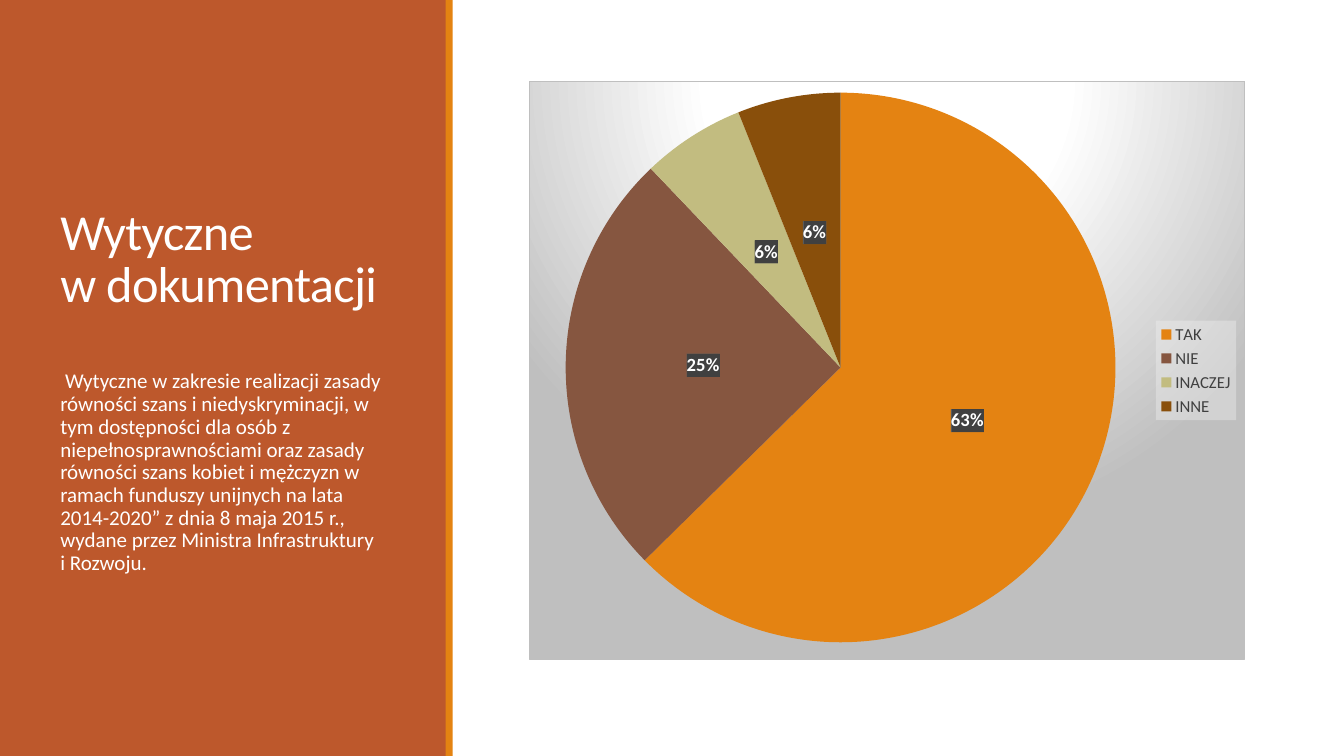
from lxml import etree
from pptx import Presentation
from pptx.chart.data import CategoryChartData
from pptx.dml.color import RGBColor
from pptx.enum.chart import XL_CHART_TYPE as ChartType
from pptx.enum.chart import XL_LABEL_POSITION as LabelPos
from pptx.enum.chart import XL_LEGEND_POSITION as LegendPos
from pptx.enum.shapes import MSO_SHAPE as Shape
from pptx.enum.text import MSO_ANCHOR as Anchor
from pptx.oxml import parse_xml
from pptx.oxml.ns import nsdecls, qn
from pptx.util import Inches, Pt

CELL = Inches(0.1)
COLS, ROWS = 133.33, 75
FONT = "Calibri"
WHITE = RGBColor(0xFF, 0xFF, 0xFF)
RUST = RGBColor(0xBD, 0x58, 0x2C)
ORANGE = RGBColor(0xE4, 0x83, 0x12)
BROWN = RGBColor(0x86, 0x56, 0x40)
SAND = RGBColor(0xC2, 0xBC, 0x80)
DARK_BROWN = RGBColor(0x89, 0x4F, 0x0B)
CHARCOAL = RGBColor(0x40, 0x40, 0x40)
GRAPHITE = RGBColor(0x59, 0x59, 0x59)
PALE = RGBColor(0xF2, 0xF2, 0xF2)
SILVER = RGBColor(0xBF, 0xBF, 0xBF)

TITLE = ["Wytyczne", "w dokumentacji"]
BODY = [
    " Wytyczne w zakresie realizacji zasady równości szans i niedyskryminacji, "
    "w tym dostępności dla osób z niepełnosprawnościami oraz zasady równości "
    "szans kobiet i mężczyzn w ramach funduszy unijnych na lata 2014-2020” "
    "z dnia 8 maja 2015 r., wydane przez Ministra Infrastruktury ",
    "i Rozwoju.",
]
ANSWERS = [("TAK", 62, ORANGE), ("NIE", 25, BROWN),
           ("INACZEJ", 6, SAND), ("INNE", 6, DARK_BROWN)]


def grid(*cells):
    return [int(c * CELL) for c in cells]


def add_band(s, col, cols, color):
    sp = s.shapes.add_shape(Shape.RECTANGLE, *grid(col, 0, cols, ROWS))
    sp.shadow.inherit = False
    sp.fill.solid()
    sp.fill.fore_color.rgb = color
    sp.line.fill.background()


def add_text(s, box, lines, size, spacing, anchor=Anchor.TOP, tracking=0):
    tf = s.shapes.add_textbox(*grid(*box)).text_frame
    tf.word_wrap = True
    tf.vertical_anchor = anchor
    p = tf.paragraphs[0]
    p.line_spacing = spacing
    for i, line in enumerate(lines):
        if i:
            p.add_line_break()
        r = p.add_run()
        r.text = line
        set_font(r.font, size, WHITE)
        if tracking:
            r.font._element.set("spc", str(int(tracking * 100)))


def set_font(font, size, color, bold=False):
    font.name = FONT
    font.size = Pt(size)
    font.color.rgb = color
    font.bold = bold


def solid(color, alpha=100):
    return (f'<a:solidFill><a:srgbClr val="{color}">'
            f'<a:alpha val="{alpha * 1000}"/></a:srgbClr></a:solidFill>')


def radial(stops):
    gs = "".join(f'<a:gs pos="{pos * 1000}"><a:srgbClr val="{color}"/></a:gs>'
                 for pos, color in stops)
    return (f'<a:gradFill><a:gsLst>{gs}</a:gsLst><a:path path="circle">'
            '<a:fillToRect l="50000" t="-80000" r="50000" b="180000"/>'
            '</a:path></a:gradFill>')


def stripes(front, back):
    return (f'<a:pattFill prst="dkVert"><a:fgClr><a:srgbClr val="{front}"/></a:fgClr>'
            f'<a:bgClr><a:srgbClr val="{back}"/></a:bgClr></a:pattFill>')


def chart_format(fill, line="<a:ln><a:noFill/></a:ln>"):
    return parse_xml(f'<c:spPr {nsdecls("c", "a")}>{fill}{line}</c:spPr>')


def place_plot(chart, **shares):
    area = chart._chartSpace.find(".//" + qn("c:plotArea"))
    for old in area.findall(qn("c:layout")):
        area.remove(old)
    layout = etree.Element(qn("c:layout"))
    manual = etree.SubElement(layout, qn("c:manualLayout"))
    settings = dict(layoutTarget="inner", xMode="edge", yMode="edge", **shares)
    for name, value in settings.items():
        etree.SubElement(manual, qn("c:" + name)).set("val", str(value))
    area.insert(0, layout)


def add_pie(s, box, answers):
    data = CategoryChartData()
    data.categories = [name for name, _, _ in answers]
    data.add_series("Series 1", [value for _, value, _ in answers])
    chart = s.shapes.add_chart(ChartType.PIE, *grid(*box), data).chart
    chart.has_title = False
    set_font(chart.font, 10, CHARCOAL)
    border = f'<a:ln w="{Pt(0.75)}">{solid(SILVER)}</a:ln>'
    backdrop = radial([(0, WHITE), (39, WHITE), (100, SILVER)])
    chart._chartSpace.find(qn("c:chart")).addnext(chart_format(backdrop, border))
    place_plot(chart, x=0.05, y=0.02, w=0.77, h=0.95)

    plot = chart.plots[0]
    plot.vary_by_categories = True
    for i, (_, _, color) in enumerate(answers):
        fill = plot.series[0].points[i].format.fill
        fill.solid()
        fill.fore_color.rgb = color

    plot.has_data_labels = True
    labels = plot.data_labels
    labels.show_value = False
    labels.show_percentage = True
    labels.number_format = "0%"
    labels.number_format_is_linked = False
    labels.position = LabelPos.CENTER
    set_font(labels.font, 13.3, WHITE, bold=True)
    labels._element.find(qn("c:txPr")).addprevious(
        chart_format(stripes(CHARCOAL, GRAPHITE)))

    chart.has_legend = True
    legend = chart.legend
    legend.position = LegendPos.RIGHT
    legend.include_in_layout = False
    set_font(legend.font, 12, CHARCOAL)
    legend._element.find(qn("c:txPr")).addprevious(chart_format(solid(PALE, 39)))


def main():
    prs = Presentation()
    prs.slide_width, prs.slide_height = grid(COLS, ROWS)
    s = prs.slides.add_slide(prs.slide_layouts[6])
    add_band(s, 0, 44.3, RUST)
    add_band(s, 44.2, 0.7, ORANGE)
    add_text(s, (5, 6.5, 35, 25), TITLE, 36, 0.85, Anchor.BOTTOM, tracking=-0.5)
    add_pie(s, (52.5, 8, 71, 57.5), ANSWERS)
    add_text(s, (5, 36.3, 35, 32.7), BODY, 15, 0.9)
    prs.save("out.pptx")


if __name__ == "__main__":
    main()
